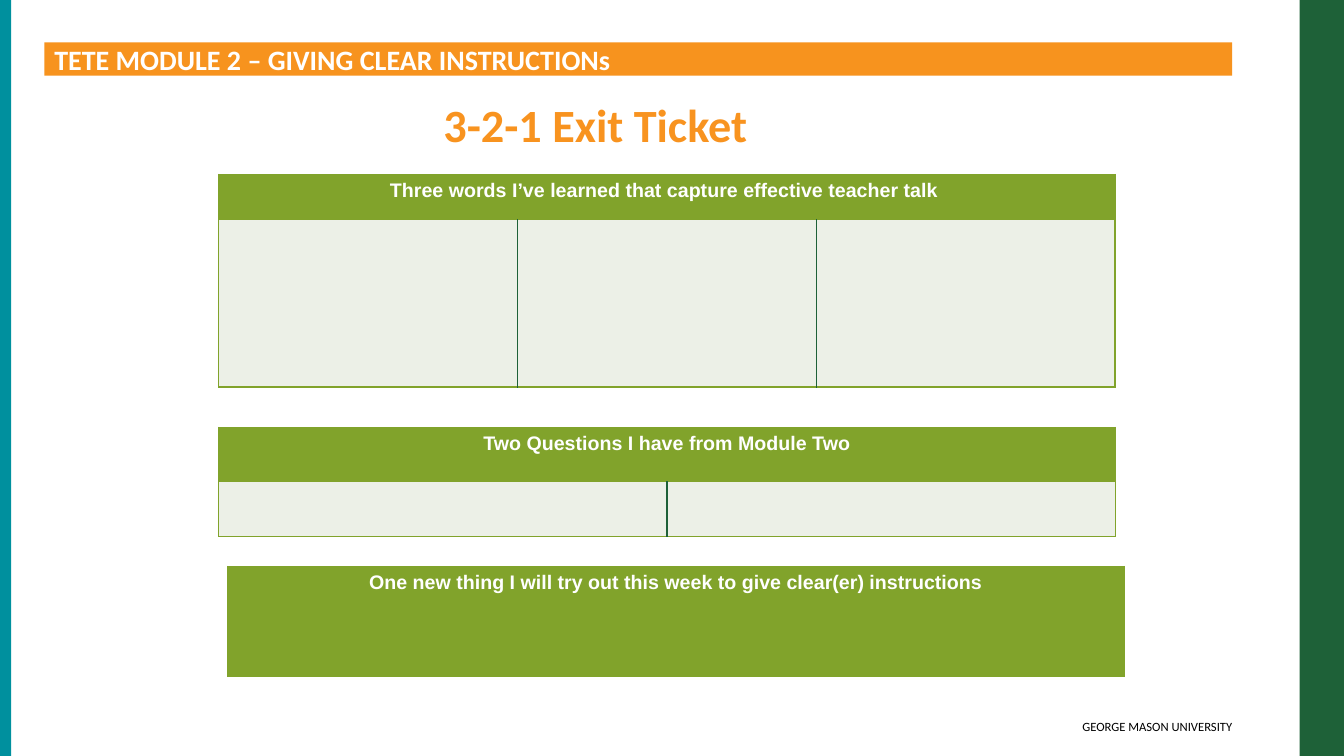
from lxml import etree
from pptx import Presentation
from pptx.dml.color import RGBColor
from pptx.enum.shapes import MSO_SHAPE
from pptx.enum.text import MSO_ANCHOR, PP_ALIGN
from pptx.oxml.ns import qn
from pptx.util import Inches, Pt

RECTANGLE = MSO_SHAPE.RECTANGLE
TOP = MSO_ANCHOR.TOP
LEFT, CENTER, RIGHT = PP_ALIGN.LEFT, PP_ALIGN.CENTER, PP_ALIGN.RIGHT
WHITE, BLACK, ORANGE = "FFFFFF", "000000", "F7931E"
FOREST, TEAL, OLIVE, PALE = "1E6138", "00909E", "81A32B", "ECF0E7"


def color(value):
    """Turn a hex string into a colour."""
    return RGBColor.from_string(value)


def write(frame, text, size, ink, font="Calibri", bold=True, align=LEFT):
    """Write one formatted paragraph into a text frame."""
    paragraph = frame.paragraphs[0]
    paragraph.alignment = align
    run = paragraph.add_run()
    run.text = text
    run.font.name, run.font.size, run.font.bold = font, Pt(size), bold
    run.font.color.rgb = color(ink)


def set_margins(frame, left, top, right, bottom):
    """Set wrapping, top anchoring and insets of a text frame."""
    frame.word_wrap = True
    frame.vertical_anchor = TOP
    frame.margin_left, frame.margin_top = Inches(left), Inches(top)
    frame.margin_right, frame.margin_bottom = Inches(right), Inches(bottom)


def add_band(slide, box, fill):
    """Add a plain filled rectangle."""
    band = slide.shapes.add_shape(RECTANGLE, *map(Inches, box))
    band.shadow.inherit = False
    band.fill.solid()
    band.fill.fore_color.rgb = color(fill)
    band.line.fill.background()
    return band


def add_label(slide, box, margins, text, **style):
    """Add a text box with one formatted line."""
    frame = slide.shapes.add_textbox(*map(Inches, box)).text_frame
    set_margins(frame, *margins)
    write(frame, text, **style)


def add_heading(slide, box, text):
    """Add the module heading bar."""
    frame = add_band(slide, box, ORANGE).text_frame
    set_margins(frame, 0.1, 0, 0.1, 0)
    write(frame, text, size=20, ink=WHITE)


def paint_cell(cell, fill, left=OLIVE, right=OLIVE):
    """Fill a cell and draw its four borders."""
    properties = cell._tc.get_or_add_tcPr()
    for tag, edge in (("lnL", left), ("lnR", right), ("lnT", OLIVE), ("lnB", OLIVE)):
        line = etree.SubElement(properties, qn(f"a:{tag}"), w=str(Pt(1)))
        solid = etree.SubElement(line, qn("a:solidFill"))
        etree.SubElement(solid, qn("a:srgbClr"), val=edge)
    cell.fill.solid()
    cell.fill.fore_color.rgb = color(fill)


def add_ticket(slide, box, prompt, row_heights, answers):
    """Add a prompt row above equal answer cells."""
    columns = max(answers, 1)
    ticket = slide.shapes.add_table(len(row_heights), columns, *map(Inches, box)).table
    for column in ticket.columns:
        column.width = Inches(box[2] / columns)
    for row, height in zip(ticket.rows, row_heights):
        row.height = Inches(height)
    for index in range(columns):
        paint_cell(ticket.cell(0, index), OLIVE)
    prompt_cell = ticket.cell(0, 0)
    if columns > 1:
        prompt_cell.merge(ticket.cell(0, columns - 1))
    write(prompt_cell.text_frame, prompt, size=14, ink=WHITE, font="Arial", align=CENTER)
    for index in range(answers):
        paint_cell(ticket.cell(1, index), PALE,
                   left=FOREST if index else OLIVE,
                   right=FOREST if index < answers - 1 else OLIVE)


def build_exit_ticket(slide, width, height):
    """Place all parts of the exit ticket slide."""
    add_band(slide, (width - 0.44, 0, 0.44, height), FOREST)
    add_band(slide, (0, 0, 0.11, height), TEAL)
    add_label(slide, (6.78, 7.08, 5.44, 0.33), (0.1, 0.05, 0, 0.05),
              "GEORGE MASON UNIVERSITY", size=9, ink=BLACK, bold=False, align=RIGHT)
    add_label(slide, (4.3, 0.86, 4.44, 0.76), (0.1, 0.1, 0.1, 0.1),
              "3-2-1 Exit Ticket", size=33, ink="F8931F")
    add_heading(slide, (0.44, 0.42, 11.78, 0.33),
                "TETE MODULE 2 – GIVING CLEAR INSTRUCTIONs")
    add_ticket(slide, (2.17, 1.73, 8.89, 2.11),
               "Three words I’ve learned that capture effective teacher talk ",
               (0.45, 1.66), answers=3)
    add_ticket(slide, (2.17, 4.24, 8.89, 1.09),
               "Two Questions I have from Module Two", (0.54, 0.54), answers=2)
    add_ticket(slide, (2.26, 5.62, 8.89, 1.09),
               "One new thing I will try out this week to give clear(er) instructions",
               (1.09,), answers=0)


def main():
    """Create and save the presentation."""
    presentation = Presentation()
    width, height = 13.33, 7.5
    presentation.slide_width, presentation.slide_height = Inches(width), Inches(height)
    slide = presentation.slides.add_slide(presentation.slide_layouts[6])
    build_exit_ticket(slide, width, height)
    presentation.save("out.pptx")


if __name__ == "__main__":
    main()
